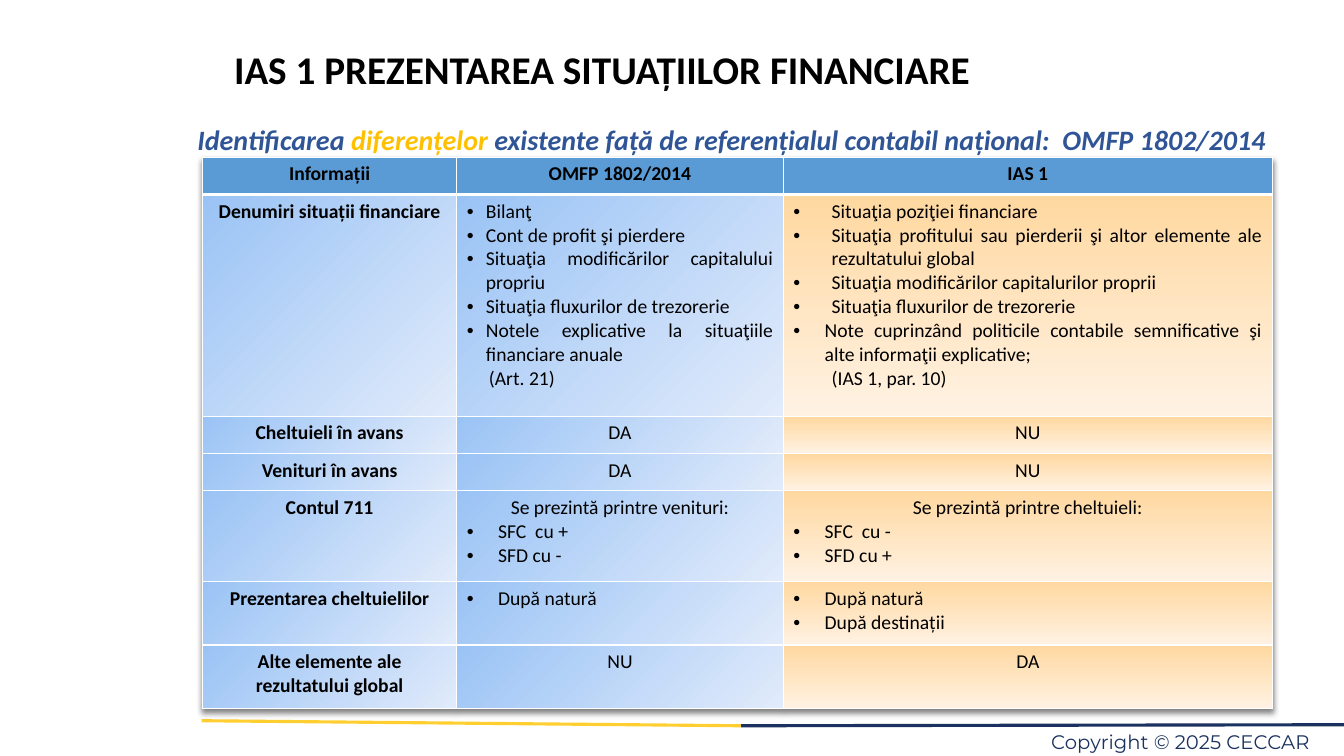
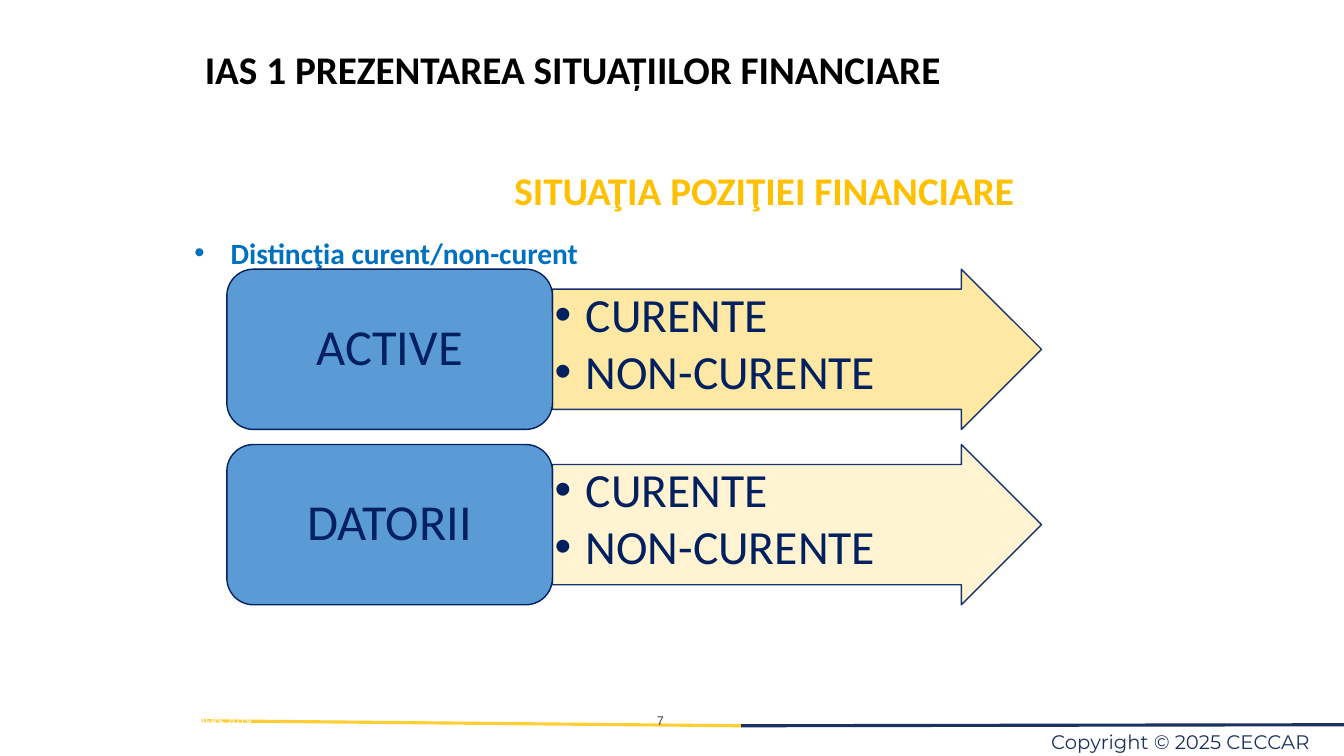
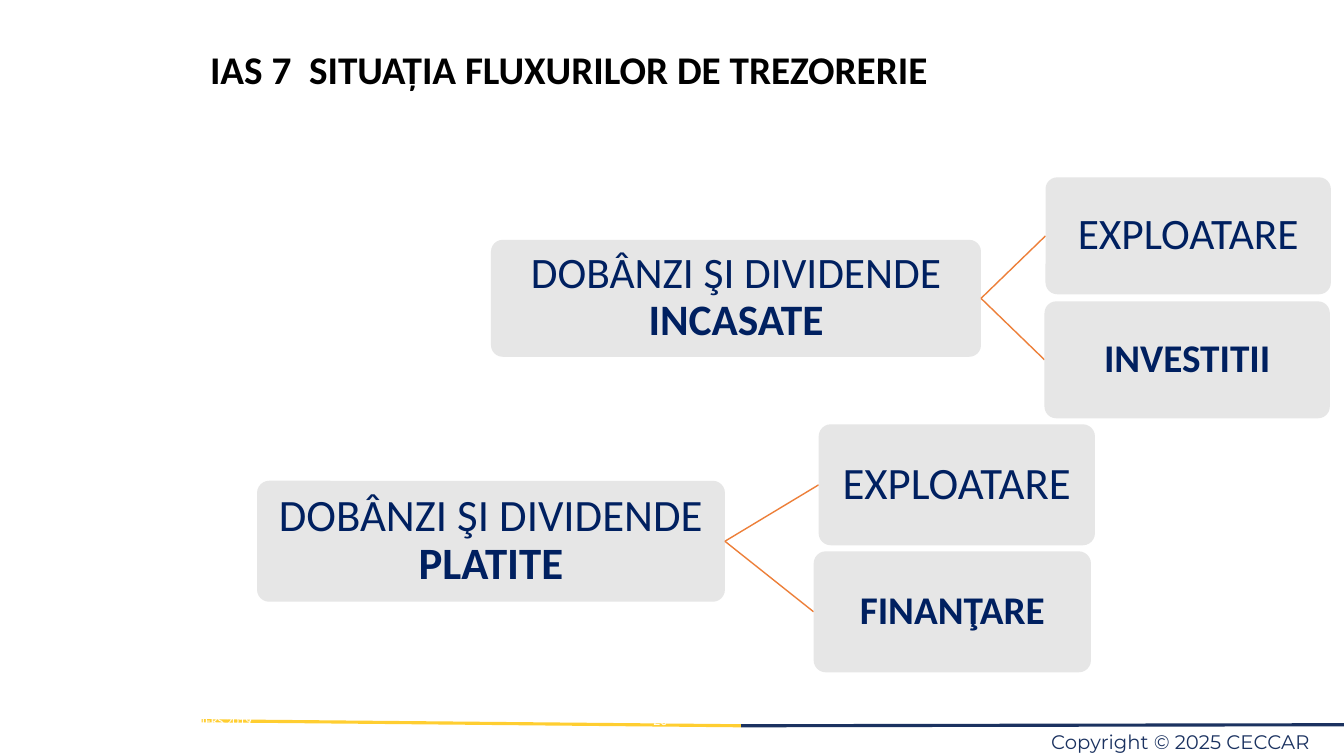
from dataclasses import dataclass, field
from typing import Any, NamedTuple

from lxml import etree
from pptx import Presentation
from pptx.dml.color import RGBColor
from pptx.enum.shapes import MSO_CONNECTOR, MSO_SHAPE
from pptx.enum.text import MSO_ANCHOR, PP_ALIGN
from pptx.oxml.ns import qn
from pptx.util import Inches, Pt

LEFT, MID, RIGHT = PP_ALIGN.LEFT, PP_ALIGN.CENTER, PP_ALIGN.RIGHT
JUST = PP_ALIGN.JUSTIFY
TOP, CENTER = MSO_ANCHOR.TOP, MSO_ANCHOR.MIDDLE
ROUND, ARROW = MSO_SHAPE.ROUNDED_RECTANGLE, MSO_SHAPE.RIGHT_ARROW
LINE = MSO_CONNECTOR.STRAIGHT

# Shared colours and text formats
BLACK, WHITE, NAVY, INK = "000000", "FFFFFF", "002060", "1B3260"
BLUE, GOLD, GREY, RUST = "5B9BD5", "FFC000", "E6E6E6", "ED7F39"
COOL, WARM = ("9AC3F5", "E1EBFB", 315), ("FFD8A0", "FFF2E3", 270)

Form = dict[str, Any]


def font(size: float, color: str, name: str = "Calibri", **more: Any) -> Form:
    return {"size": Pt(size), "color": color, "name": name, **more}


TITLE = font(28, BLACK, bold=True)
CELL = font(14, BLACK)
HEAD = font(14, BLACK, bold=True)
LEAD = font(20, "2F5597", bold=True, italic=True)
TIGHT = {"line_spacing": 0.9}


class Box(NamedTuple):
    x: float
    y: float
    w: float
    h: float


class Run(NamedTuple):
    text: str
    form: Form


@dataclass
class Para:
    runs: list[Run]
    align: PP_ALIGN = MID
    hang: float = 0
    indent: float = 0
    form: Form = field(default_factory=dict)


@dataclass
class Tree:
    root: Box
    label: str
    strong: str
    size: float
    leaves: list[tuple[Box, str, Form]]


def hue(code: str) -> RGBColor:
    return RGBColor.from_string(code)


# Text
def write(frame: Any, paras: list[Para]) -> None:
    for i, item in enumerate(paras):
        para = frame.add_paragraph() if i else frame.paragraphs[0]
        para.alignment = item.align
        for key, val in item.form.items():
            setattr(para, key, val)
        props = para._p.get_or_add_pPr()
        if item.hang or item.indent:
            props.set("marL", str(Inches(item.hang or item.indent)))
            props.set("indent", str(-Inches(item.hang)))
        if item.hang:
            etree.SubElement(props, qn("a:buFont")).set("typeface", "Arial")
            etree.SubElement(props, qn("a:buChar")).set("char", "•")
        for part in item.runs:
            run = para.add_run()
            run.text = part.text
            for key, val in part.form.items():
                if key == "color":
                    run.font.color.rgb = hue(val)
                else:
                    setattr(run.font, key, val)


def setup(frame: Any, anchor: MSO_ANCHOR, pad: tuple[float, float]) -> None:
    wide, high = map(Inches, pad)
    form = {"word_wrap": True, "vertical_anchor": anchor,
            "margin_left": wide, "margin_right": wide,
            "margin_top": high, "margin_bottom": high}
    for key, val in form.items():
        setattr(frame, key, val)


def label(slide: Any, box: Box, paras: list[Para], anchor: MSO_ANCHOR = TOP,
          pad: tuple[float, float] = (0.1, 0.05)) -> None:
    frame = slide.shapes.add_textbox(*map(Inches, box)).text_frame
    setup(frame, anchor, pad)
    write(frame, paras)


def plain(text: str, form: Form, align: PP_ALIGN = MID, **more: Any) -> Para:
    return Para([Run(text, form)], align, form=more)


# Shapes and lines
def block(slide: Any, kind: MSO_SHAPE, box: Box, fill: str, paras: list[Para],
          edge: str = "", bends: tuple[float, ...] = (),
          anchor: MSO_ANCHOR = CENTER, pad: tuple[float, float] = (0.02, 0.02),
          alpha: int = 100) -> None:
    shape = slide.shapes.add_shape(kind, *map(Inches, box))
    shape.shadow.inherit = False
    for i, val in enumerate(bends):
        shape.adjustments[i] = val
    shape.fill.solid()
    shape.fill.fore_color.rgb = hue(fill)
    if edge:
        shape.line.color.rgb = hue(edge)
        shape.line.width = Pt(1)
    else:
        shape.line.fill.background()
    if alpha < 100:
        for tone in shape._element.spPr.iter(qn("a:srgbClr")):
            etree.SubElement(tone, qn("a:alpha")).set("val", str(alpha * 1000))
    setup(shape.text_frame, anchor, pad)
    write(shape.text_frame, paras)


def rule(slide: Any, ends: tuple[float, ...], color: str, width: float) -> None:
    line = slide.shapes.add_connector(LINE, *map(Inches, ends))
    line.line.color.rgb = hue(color)
    line.line.width = Pt(width)
    etree.SubElement(line._element.spPr, qn("a:effectLst"))


def start(deck: Any, title: str, left: float, width: float, page: str = "",
          tint: str = WHITE) -> Any:
    slide = deck.slides.add_slide(deck.slide_layouts[6])
    rule(slide, (2, 7.15, 7.35, 7.2), "FFCE31", 2.25)
    rule(slide, (7.35, 7.2, 13.33, 7.19), INK, 2.25)
    label(slide, Box(9.11, 7.19, 3.88, 0.27),
          [plain("Copyright © 2025 CECCAR", font(14, INK, "Montserrat"),
                 RIGHT, line_spacing=Pt(20.5))], pad=(0, 0))
    label(slide, Box(left, 0.45, width, 0.89), [plain(title, TITLE, **TIGHT)])
    if page:
        label(slide, Box(5.66, 6.95, 1.78, 0.4),
              [plain(page, font(9, tint, "Arial"))], CENTER)
        label(slide, Box(0, 6.95, 4.5, 0.4),
              [plain("IFRS 2019", font(9, WHITE))], CENTER)
    return slide


# Table
def cell(text: str) -> list[Para]:
    return [plain(text, CELL)]


def items(texts: list[str], hang: float = 0.31,
          align: PP_ALIGN = LEFT) -> list[Para]:
    return [Para([Run(text, CELL)], align, hang) for text in texts]


def note(text: str, indent: float) -> Para:
    return Para([Run(text, CELL)], JUST, indent=indent)


COLS = [2.52, 3.24, 4.85]
ROWS = [0.37, 2.2, 0.37, 0.37, 0.9, 0.63, 0.63]
HEADS = ["Informații", "OMFP 1802/2014", "IAS 1"]
FACTS = [
    ("Denumiri situații financiare",
     items(["Bilanţ", "Cont de profit şi pierdere",
            "Situaţia modificărilor capitalului propriu",
            "Situaţia fluxurilor de trezorerie",
            "Notele explicative la situaţiile financiare anuale"], 0.19, JUST)
     + [note("(Art. 21)", 0.22)],
     items(["Situaţia poziţiei financiare",
            "Situaţia profitului sau pierderii şi altor elemente ale "
            "rezultatului global",
            "Situaţia modificărilor capitalurilor proprii",
            "Situaţia fluxurilor de trezorerie"], 0.38, JUST)
     + items(["Note cuprinzând politicile contabile semnificative şi alte "
              "informaţii explicative;"], 0.31, JUST)
     + [note("(IAS 1, par. 10)", 0.38)]),
    ("Cheltuieli în avans", cell("DA"), cell("NU")),
    ("Venituri în avans", cell("DA"), cell("NU")),
    ("Contul 711",
     cell("Se prezintă printre venituri:") + items(["SFC  cu +", "SFD cu -"]),
     cell("Se prezintă printre cheltuieli:") + items(["SFC  cu -", "SFD cu +"])),
    ("Prezentarea cheltuielilor", items(["După natură"]),
     items(["După natură", "După destinații"])),
    ("Alte elemente ale rezultatului global", cell("NU"), cell("DA")),
]


def frame_cell(box: Any, base: float) -> None:
    props = box._tc.get_or_add_tcPr()
    sides = {"a:lnL": 1, "a:lnR": 1, "a:lnT": 1, "a:lnB": base}
    for i, (tag, width) in enumerate(sides.items()):
        line = etree.Element(qn(tag), w=str(Pt(width)))
        fill = etree.SubElement(line, qn("a:solidFill"))
        etree.SubElement(fill, qn("a:srgbClr")).set("val", WHITE)
        props.insert(i, line)


def shade(box: Any, tones: tuple[str, str, int]) -> None:
    box.fill.gradient()
    box.fill.gradient_angle = tones[2]
    for stop, color in zip(box.fill.gradient_stops, tones):
        stop.color.rgb = hue(color)


def cast(table: Any) -> None:
    effect = etree.Element(qn("a:effectLst"))
    shadow = etree.SubElement(effect, qn("a:outerShdw"), blurRad=str(Pt(4)),
                              dist=str(Pt(3)), dir="5400000")
    tone = etree.SubElement(shadow, qn("a:srgbClr"), val=BLACK)
    etree.SubElement(tone, qn("a:alpha"), val="50000")
    table._tbl.tblPr.insert(0, effect)


def grid(slide: Any) -> None:
    table = slide.shapes.add_table(
        len(ROWS), len(COLS), Inches(2.01), Inches(1.56),
        Inches(sum(COLS)), Inches(sum(ROWS))).table
    for col, width in zip(table.columns, COLS):
        col.width = Inches(width)
    for row, height in zip(table.rows, ROWS):
        row.height = Inches(height)
    rows = [[[plain(text, HEAD)] for text in HEADS]]
    rows += [[[plain(name, HEAD)], *rest] for name, *rest in FACTS]
    for r, row in enumerate(rows):
        for c, paras in enumerate(row):
            box = table.cell(r, c)
            write(box.text_frame, paras)
            if r:
                shade(box, WARM if c == 2 else COOL)
            else:
                box.fill.solid()
                box.fill.fore_color.rgb = hue(BLUE)
            frame_cell(box, 1 if r else 3)
    cast(table)


# Slides
def compare(deck: Any) -> None:
    slide = start(deck, "IAS 1 PREZENTAREA SITUAȚIILOR FINANCIARE", 0.91, 10.12)
    label(slide, Box(1.86, 1.17, 11.48, 0.5), [Para([
        Run("Identificarea ", LEAD),
        Run("diferențelor", {**LEAD, "color": GOLD}),
        Run(" existente față de referențialul contabil național:  "
            "OMFP 1802/2014", LEAD)], JUST)])
    grid(slide)


def split(deck: Any) -> None:
    slide = start(deck, "IAS 1 PREZENTAREA SITUAȚIILOR FINANCIARE", 1.03, 9.3,
                  "7", "404040")
    label(slide, Box(1.83, 1.65, 11.5, 1.1), [
        plain("SITUAŢIA POZIŢIEI FINANCIARE", font(28, GOLD, bold=True),
              **TIGHT),
        Para([Run("Distincţia curent/non-curent",
                  font(21, "0070C0", bold=True))],
             JUST, 0.36, form={"line_spacing": 1.6})])
    kinds = [Para([Run(text, font(34, NAVY))], LEFT, 0.31,
                  form={**TIGHT, "space_after": Pt(4)})
             for text in ("CURENTE", "NON-CURENTE")]
    for i, (name, fill) in enumerate([("ACTIVE", "FFE699"),
                                      ("DATORII", "FFF2CC")]):
        top = 2.67 + i * 1.74
        block(slide, ARROW, Box(5.48, top, 4.85, 1.59), fill, kinds, NAVY,
              (0.75, 0.5), TOP, alpha=90)
        block(slide, ROUND, Box(2.25, top, 3.23, 1.59), BLUE,
              [plain(name, font(36, NAVY), **TIGHT)], NAVY, pad=(0.15, 0.07))


BOLD = font(28, NAVY, bold=True)
TREES = [
    Tree(Box(4.87, 2.38, 4.86, 1.16), "DOBÂNZI ŞI DIVIDENDE ", "INCASATE", 31,
         [(Box(10.37, 1.76, 2.83, 1.16), "EXPLOATARE", font(31, NAVY)),
          (Box(10.36, 2.99, 2.83, 1.16), "INVESTITII", BOLD)]),
    Tree(Box(2.55, 4.77, 4.64, 1.2), "DOBÂNZI ŞI DIVIDENDE ", "PLATITE", 32,
         [(Box(8.12, 4.21, 2.74, 1.2), "EXPLOATARE", font(32, NAVY)),
          (Box(8.07, 5.47, 2.75, 1.2), "FINANŢARE", BOLD)]),
]


def node(slide: Any, box: Box, runs: list[Run]) -> None:
    block(slide, ROUND, box, GREY, [Para(runs, form=TIGHT)], bends=(0.1,))


def flows(deck: Any) -> None:
    slide = start(deck, "IAS 7  SITUAȚIA FLUXURILOR DE TREZORERIE", 0, 11.28,
                  "26")
    for tree in TREES:
        root, form = tree.root, font(tree.size, NAVY)
        node(slide, root, [Run(tree.label, form),
                           Run(tree.strong, {**form, "bold": True})])
        for leaf, text, style in tree.leaves:
            rule(slide, (root.x + root.w, root.y + root.h / 2,
                         leaf.x, leaf.y + leaf.h / 2), RUST, 1)
            node(slide, leaf, [Run(text, style)])


def main() -> None:
    deck = Presentation()
    deck.slide_width, deck.slide_height = Inches(13.33), Inches(7.5)
    for build in (compare, split, flows):
        build(deck)
    deck.save("out.pptx")


if __name__ == "__main__":
    main()
